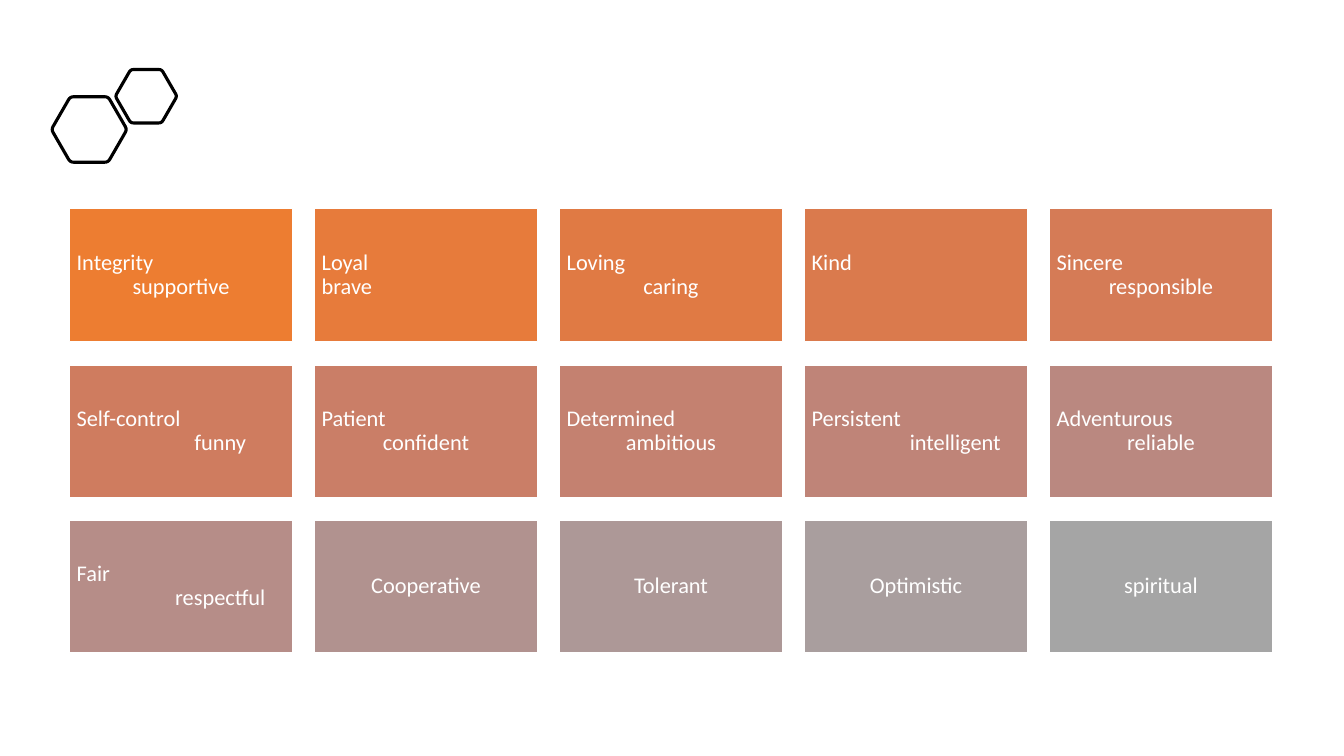
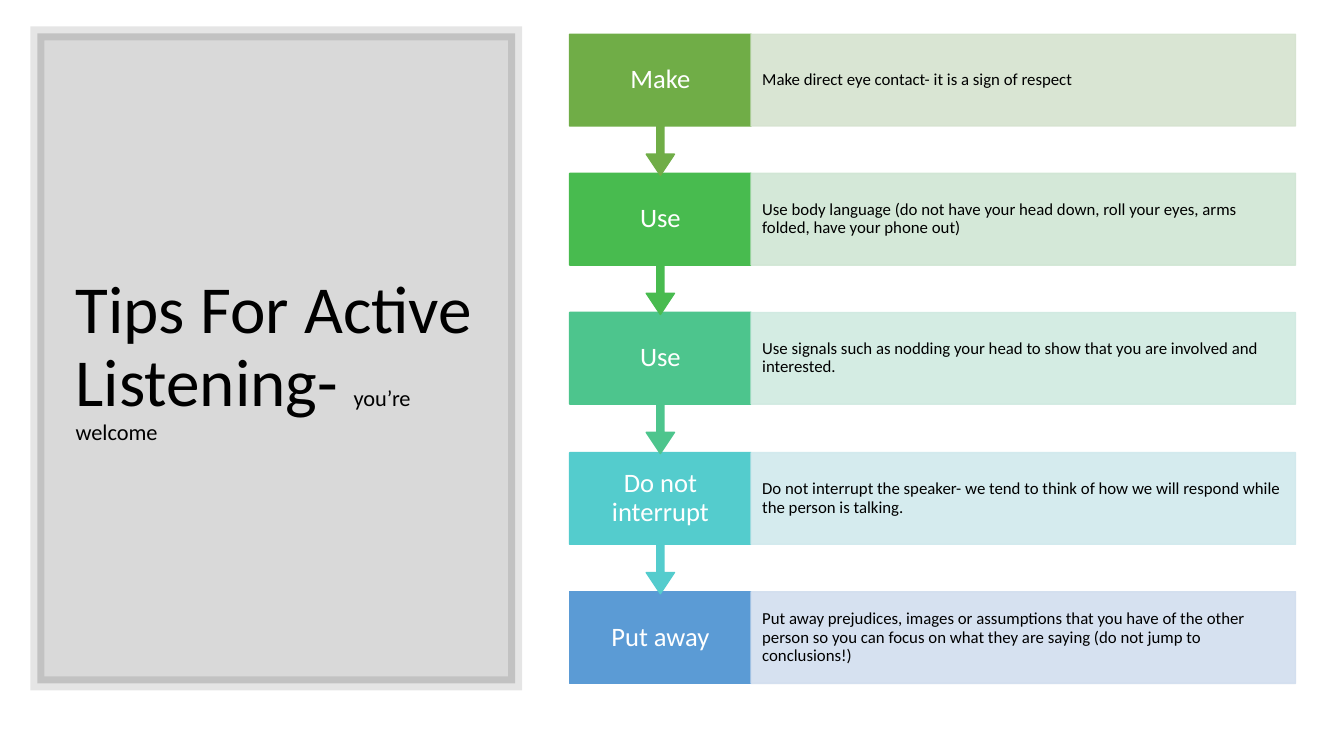
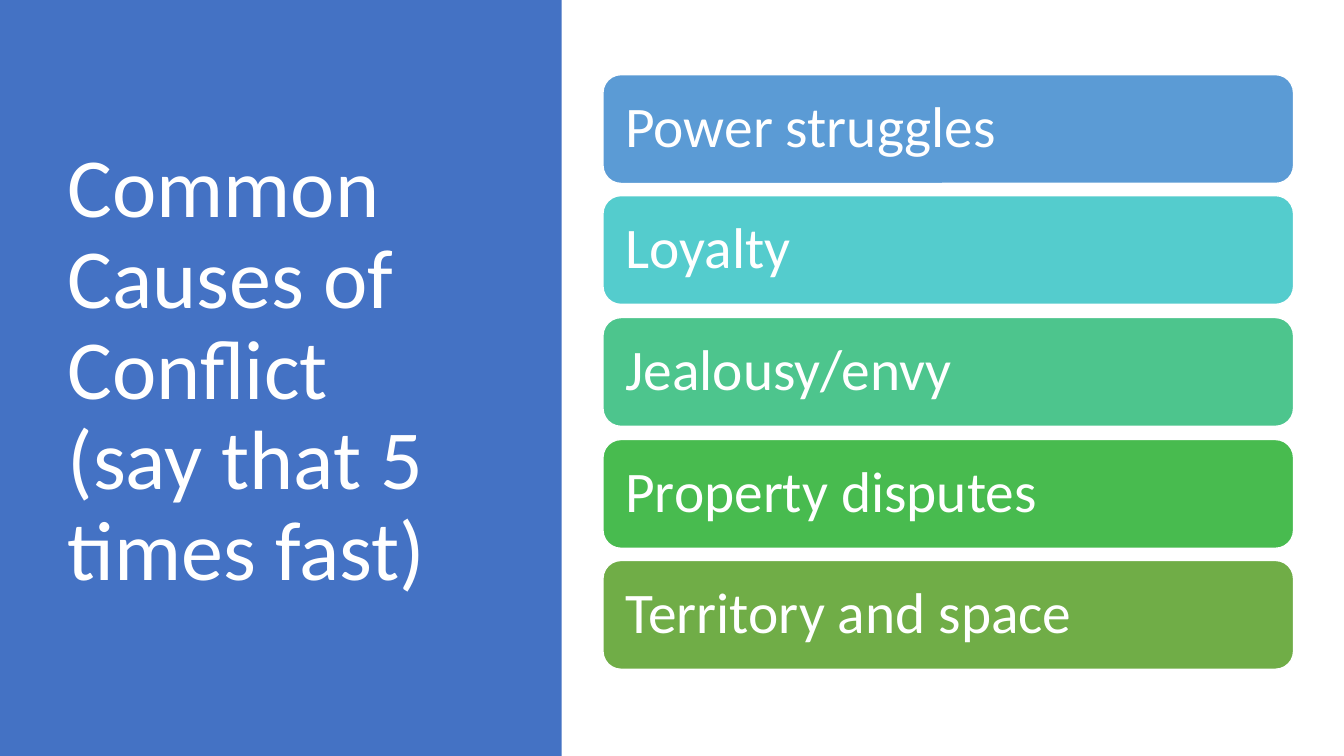
from math import cos, pi, sin

from lxml.etree import SubElement
from pptx import Presentation
from pptx.dml.color import RGBColor
from pptx.enum.shapes import MSO_SHAPE
from pptx.enum.text import MSO_ANCHOR, MSO_AUTO_SIZE, PP_ALIGN
from pptx.oxml.ns import qn
from pptx.util import Pt

PX = 9144
FONT = "Calibri"
TITLE_ONLY, BLANK = 5, 6

WHITE = RGBColor(0xFF, 0xFF, 0xFF)
BLACK = RGBColor(0x00, 0x00, 0x00)
ROYAL = RGBColor(0x44, 0x72, 0xC4)
BLUE = RGBColor(0x5B, 0x9B, 0xD5)
TEAL = RGBColor(0x54, 0xCC, 0xCD)
MINT = RGBColor(0x4D, 0xC5, 0x8D)
GREEN = RGBColor(0x48, 0xBB, 0x4F)
OLIVE = RGBColor(0x70, 0xAD, 0x47)
PALE_BLUE = RGBColor(0xD2, 0xDE, 0xEF)
PALE_TEAL = RGBColor(0xD1, 0xE9, 0xED)
PALE_MINT = RGBColor(0xD0, 0xEA, 0xE1)
PALE_GREEN = RGBColor(0xD0, 0xE6, 0xD4)
PALE_OLIVE = RGBColor(0xD5, 0xE3, 0xCF)
ORANGE_TO_GRAY = [RGBColor.from_string(code) for code in (
    "ED7D31", "E77B3B", "E07A44", "DA7A4D", "D57B56",
    "CF7C5F", "CA7E67", "C48170", "BF8478", "BA8880",
    "B68D88", "B1928F", "AD9897", "A99E9E", "A5A5A5")]

SHIFT = 78
TRAITS = [
    ("Integrity", "supportive", 0), ("Loyal", "brave", None),
    ("Loving", "caring", 0), ("Kind", "", 0), ("Sincere", "responsible", 0),
    ("Self-control", "funny", SHIFT), ("Patient", "confident", 0),
    ("Determined", "ambitious", 0), ("Persistent", "intelligent", SHIFT),
    ("Adventurous", "reliable", 0), ("Fair", "respectful", SHIFT),
    ("", "Cooperative", 0), ("", "Tolerant", 0),
    ("", "Optimistic", 0), ("", "spiritual", 0)]
TIPS = [
    ("Make", "Make direct eye contact- it is a sign of respect", OLIVE, PALE_OLIVE),
    ("Use", "Use body language (do not have your head down, roll your eyes, arms "
     "folded, have your phone out)", GREEN, PALE_GREEN),
    ("Use", "Use signals such as nodding your head to show that you are involved "
     "and interested.", MINT, PALE_MINT),
    ("Do not interrupt", "Do not interrupt the speaker- we tend to think of how we "
     "will respond while the person is talking.", TEAL, PALE_TEAL),
    ("Put away", "Put away prejudices, images or assumptions that you have of the "
     "other person so you can focus on what they are saying (do not jump to "
     "conclusions!)", BLUE, PALE_BLUE)]
CAUSES = [("Power struggles", BLUE), ("Loyalty", TEAL), ("Jealousy/envy", MINT),
          ("Property disputes", GREEN), ("Territory and space", OLIVE)]


def spread(first, last, count):
    return [round(first + (last - first) * i / (count - 1)) for i in range(count)]


class Pages:
    def __init__(self):
        self.deck = Presentation()
        self.deck.slide_width = 1333 * PX
        self.deck.slide_height = 750 * PX
        self.page = None

    def new_page(self, layout):
        self.page = self.deck.slides.add_slide(self.deck.slide_layouts[layout])

    def format_para(self, para, size, color, align=PP_ALIGN.LEFT):
        para.alignment = align
        para.line_spacing = 0.9
        para.space_before = para.space_after = Pt(0)
        for span in para.runs:
            span.font.name = FONT
            span.font.size = Pt(size)
            span.font.color.rgb = color

    def title(self, bounds, text, size, color, aside="", aside_size=0):
        box = self.page.shapes.title
        box.left, box.top, box.width, box.height = [n * PX for n in bounds]
        frame = box.text_frame
        frame.text = text
        frame.word_wrap = True
        frame.auto_size = MSO_AUTO_SIZE.NONE
        frame.vertical_anchor = MSO_ANCHOR.MIDDLE
        para = frame.paragraphs[0]
        if aside:
            para.add_run().text = aside
        self.format_para(para, size, color)
        if aside:
            para.runs[-1].font.size = Pt(aside_size)

    def block(self, kind, bounds, fill, line=None, line_width=1):
        box = self.page.shapes.add_shape(kind, *[n * PX for n in bounds])
        box.shadow.inherit = False
        box.fill.solid()
        box.fill.fore_color.rgb = fill
        if line is None:
            box.line.fill.background()
        else:
            box.line.color.rgb = line
            box.line.width = Pt(line_width)
        return box

    def label(self, box, lines, size, color, inset, align=PP_ALIGN.LEFT):
        frame = box.text_frame
        frame.word_wrap = True
        frame.vertical_anchor = MSO_ANCHOR.MIDDLE
        frame.margin_left = frame.margin_right = inset[0] * PX
        frame.margin_top = frame.margin_bottom = inset[1] * PX
        frame.text = "\n".join(lines)
        for para in frame.paragraphs:
            self.format_para(para, size, color, align)
        return frame

    def fade(self, box, fill_percent, line_percent):
        colors = list(box._element.spPr.iter(qn("a:srgbClr")))
        for color, percent in zip(colors, (fill_percent, line_percent)):
            SubElement(color, qn("a:alpha"), val=str(percent * 1000))

    def panel(self, bounds, fill, line=None, line_width=1):
        box = self.block(MSO_SHAPE.RECTANGLE, bounds, fill, line, line_width)
        self.page.shapes._spTree.insert(2, box._element)
        return box

    def hexagon(self, center_x, center_y, radius):
        corners = [(center_x + radius * cos(i * pi / 3),
                    center_y + radius * sin(i * pi / 3)) for i in range(6)]
        points = []
        for i, corner in enumerate(corners):
            before, after = corners[i - 1], corners[(i + 1) % 6]
            for t in (0, 0.25, 0.5, 0.75, 1):
                pull_before, pull_after = 0.09 * (1 - t) ** 2, 0.09 * t ** 2
                points.append(tuple(
                    round(PX * (c + pull_before * (b - c) + pull_after * (a - c)))
                    for b, c, a in zip(before, corner, after)))
        builder = self.page.shapes.build_freeform(*points[0], scale=1.0)
        builder.add_line_segments(points[1:], close=True)
        outline = builder.convert_to_shape()
        outline.shadow.inherit = False
        outline.fill.background()
        outline.line.color.rgb = BLACK
        outline.line.width = Pt(2.25)

    def trait(self, left, top, fill, first, second, shift):
        box = self.block(MSO_SHAPE.RECTANGLE, (left, top, 221, 132), fill, WHITE)
        lines = [word for word in (first, second) if word]
        frame = self.label(box, lines, 16, WHITE, (7, 7))
        last = frame.paragraphs[-1]
        if not second:
            frame.margin_bottom = 31 * PX
        elif shift is not None:
            last.alignment = PP_ALIGN.CENTER
            last._p.get_or_add_pPr().set("marL", str(shift * PX))

    def tip(self, top, heading, detail, color, pale, is_last):
        kind = MSO_SHAPE.RECTANGLE if is_last else MSO_SHAPE.DOWN_ARROW_CALLOUT
        step = self.block(kind, (565, top, 180, 91 if is_last else 140), color, color)
        if not is_last:
            for i, value in enumerate((0.05, 0.1, 0.15, 0.65)):
                step.adjustments[i] = value
        self.label(step, [heading], 19, WHITE, (13, 15), PP_ALIGN.CENTER)
        strip = self.block(MSO_SHAPE.RECTANGLE, (745, top, 540, 91), pale, pale)
        self.fade(strip, 90, 90)
        self.label(strip, [detail], 12, BLACK, (11, 17))

    def cause(self, top, text, color):
        bar = self.block(MSO_SHAPE.ROUNDED_RECTANGLE, (598, top, 685, 108), color, WHITE)
        self.label(bar, [text], 41, WHITE, (17, 17))


def main():
    pages = Pages()

    pages.new_page(BLANK)
    pages.hexagon(88.5, 128.5, 37.5)
    pages.hexagon(145, 95.5, 30.6)
    cells = [(left, top) for top in spread(207, 516, 3) for left in spread(69, 1041, 5)]
    for (left, top), fill, words in zip(cells, ORANGE_TO_GRAY, TRAITS):
        pages.trait(left, top, fill, *words)

    pages.new_page(TITLE_ONLY)
    frame = pages.panel((37, 33, 474, 645), BLACK, BLACK, 10)
    pages.fade(frame, 15, 10)
    SubElement(frame._element.spPr.find(qn("a:ln")), qn("a:miter"), lim="800000")
    pages.title((65, 70, 416, 575), "Tips For Active Listening- ", 48, BLACK,
                "you’re welcome", 16)
    rows = list(zip(spread(34, 587, len(TIPS)), TIPS))
    for top, tip in reversed(rows):
        pages.tip(top, *tip, is_last=tip is TIPS[-1])

    pages.new_page(TITLE_ONLY)
    pages.panel((0, 0, 557, 750), ROYAL)
    pages.title((57, 68, 416, 602), "Common Causes of Conflict (say that 5 times fast)",
                60, WHITE)
    for top, cause in zip(spread(74, 556, len(CAUSES)), CAUSES):
        pages.cause(top, *cause)

    pages.deck.save("out.pptx")


if __name__ == "__main__":
    main()
